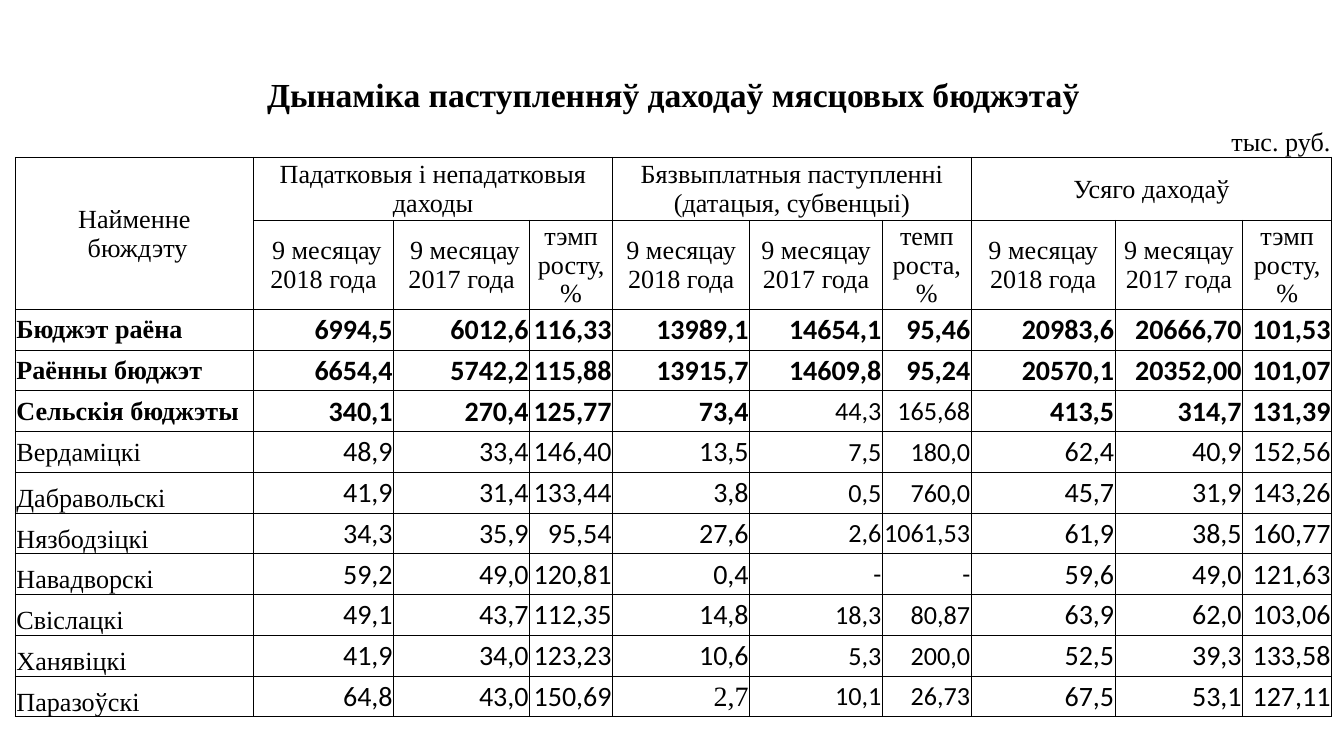
from lxml import etree
from pptx import Presentation
from pptx.dml.color import RGBColor
from pptx.enum.text import MSO_ANCHOR, PP_ALIGN
from pptx.oxml.ns import qn
from pptx.util import Cm, Pt

LEFT, CENTER, RIGHT = PP_ALIGN.LEFT, PP_ALIGN.CENTER, PP_ALIGN.RIGHT
MIDDLE, BOTTOM = MSO_ANCHOR.MIDDLE, MSO_ANCHOR.BOTTOM
BLACK = RGBColor(0, 0, 0)
SERIF, SANS = "Times New Roman", "Calibri"
PLAIN_STYLE = "{2D5ABB26-0587-4C30-8999-92F81FD0307C}"

TITLE = "Дынаміка паступленняў даходаў мясцовых бюджэтаў"
UNIT = "тыс. руб."
NAME_HEADER = "Найменне\n бюждэту"
GROUPS = [
    (1, 4, "Падатковыя і непадатковыя даходы"),
    (5, 8, "Бязвыплатныя паступленні (датацыя, субвенцыі)"),
    (9, 13, "Усяго даходаў"),
]
YEAR_2018, YEAR_2017 = "9 месяцау 2018 года", "9 месяцау 2017 года"
GROWTH = "тэмп\nросту, %"
SUBHEADERS = [
    " " + YEAR_2018, " " + YEAR_2017, GROWTH,
    YEAR_2018, YEAR_2017, "темп\nроста, %",
    YEAR_2018, YEAR_2017, GROWTH,
]
BUDGETS = [
    ("Бюджэт раёна", "6994,5", "6012,6", "116,33", "13989,1", "14654,1", "95,46", "20983,6", "20666,70", "101,53"),
    ("Раённы бюджэт", "6654,4", "5742,2", "115,88", "13915,7", "14609,8", "95,24", "20570,1", "20352,00", "101,07"),
    ("Сельскія бюджэты", "340,1", "270,4", "125,77", "73,4", "44,3", "165,68", "413,5", "314,7", "131,39"),
    ("Вердаміцкі", "48,9", "33,4", "146,40", "13,5", "7,5", "180,0", "62,4", "40,9", "152,56"),
    ("Дабравольскі", "41,9", "31,4", "133,44", "3,8", "0,5", "760,0", "45,7", "31,9", "143,26"),
    ("Нязбодзіцкі", "34,3", "35,9", "95,54", "27,6", "2,6", "1061,53", "61,9", "38,5", "160,77"),
    ("Навадворскі", "59,2", "49,0", "120,81", "0,4", "-", "-", "59,6", "49,0", "121,63"),
    ("Свіслацкі", "49,1", "43,7", "112,35", "14,8", "18,3", "80,87", "63,9", "62,0", "103,06"),
    ("Ханявіцкі", "41,9", "34,0", "123,23", "10,6", "5,3", "200,0", "52,5", "39,3", "133,58"),
    ("Паразоўскі", "64,8", "43,0", "150,69", "2,7", "10,1", "26,73", "67,5", "53,1", "127,11"),
]
COLUMN_WIDTHS = [4.5, 2.65, 1.88, 0.69, 1.57, 2.26, 0.33, 2.51, 1.68, 2.26, 0.46, 1.83, 0.58, 1.68]
ROW_HEIGHTS = [0.81, 0.81, 1.19, 1.68] + [0.77] * len(BUDGETS)
UNIT_ROW_SPANS = [(0, 0), (1, 2), (3, 5), (6, 8), (9, 9), (10, 11), (12, 13)]
BODY_SPANS = [(0, 0), (1, 1), (2, 3), (4, 4), (5, 6), (7, 7), (8, 8), (9, 10), (11, 12), (13, 13)]
GROUP_ROW, SUBHEADER_ROW, FIRST_BUDGET_ROW = 2, 3, 4
TOTAL_COUNT = 3
FIRST_BOTTOM_NAME = 4
SMALL_COLUMNS = (5, 6)


def add_borders(cell, sides):
    properties = cell._tc.get_or_add_tcPr()
    for side in sides:
        line = etree.SubElement(properties, qn("a:ln" + side), w=str(Pt(0.5)))
        fill = etree.SubElement(line, qn("a:solidFill"))
        etree.SubElement(fill, qn("a:srgbClr"), val=str(BLACK))


def merge(table, row, first, last, last_row=None):
    cell = table.cell(row, first)
    end = table.cell(last_row or row, last)
    if cell._tc is not end._tc:
        cell.merge(end)
    return cell


def write(cell, text, align=CENTER, anchor=MIDDLE, size=14, name=SERIF, bold=False):
    cell.text = text
    cell.vertical_anchor = anchor
    for paragraph in cell.text_frame.paragraphs:
        paragraph.alignment = align
        font = paragraph.font
        font.size, font.name, font.bold = Pt(size), name, bold
        font.color.rgb = BLACK


presentation = Presentation()
presentation.slide_width, presentation.slide_height = Cm(25.4), Cm(14.28)
slide = presentation.slides.add_slide(presentation.slide_layouts[6])
table = slide.shapes.add_table(
    len(ROW_HEIGHTS), len(COLUMN_WIDTHS), Cm(0.29), Cm(1.35),
    Cm(sum(COLUMN_WIDTHS)), Cm(sum(ROW_HEIGHTS)),
).table
table.first_row = table.horz_banding = False
table._tbl.tblPr.find(qn("a:tableStyleId")).text = PLAIN_STYLE
for column, width in zip(table.columns, COLUMN_WIDTHS):
    column.width = Cm(width)
for row_index, height in enumerate(ROW_HEIGHTS):
    table.rows[row_index].height = Cm(height)
    for cell in table.rows[row_index].cells:
        cell.margin_left = cell.margin_right = cell.margin_top = Cm(0.02)
        cell.margin_bottom = 0
        add_borders(cell, "LRTB" if row_index >= GROUP_ROW else "B" * row_index)
        cell.fill.background()

write(merge(table, 0, 0, len(COLUMN_WIDTHS) - 1), TITLE, anchor=BOTTOM, size=18, bold=True)
for first, last in UNIT_ROW_SPANS:
    unit_cell = merge(table, 1, first, last)
write(unit_cell, UNIT, RIGHT, BOTTOM)

write(merge(table, GROUP_ROW, 0, 0, SUBHEADER_ROW), NAME_HEADER)
for first, last, text in GROUPS:
    write(merge(table, GROUP_ROW, first, last), text)
for (first, last), text in zip(BODY_SPANS[1:], SUBHEADERS):
    write(merge(table, SUBHEADER_ROW, first, last), text)

for index, budget in enumerate(BUDGETS):
    for position, ((first, last), text) in enumerate(zip(BODY_SPANS, budget)):
        cell = merge(table, FIRST_BUDGET_ROW + index, first, last)
        total = index < TOTAL_COUNT
        if position == 0:
            anchor = BOTTOM if index >= FIRST_BOTTOM_NAME else MIDDLE
            write(cell, text, LEFT, anchor, bold=total)
            continue
        small = position in SMALL_COLUMNS and index >= TOTAL_COUNT - 1
        serif = position == 4 and index == len(BUDGETS) - 1
        write(cell, text, RIGHT, size=14 if small else 15,
              name=SERIF if serif else SANS, bold=total and not small)

presentation.save("out.pptx")
